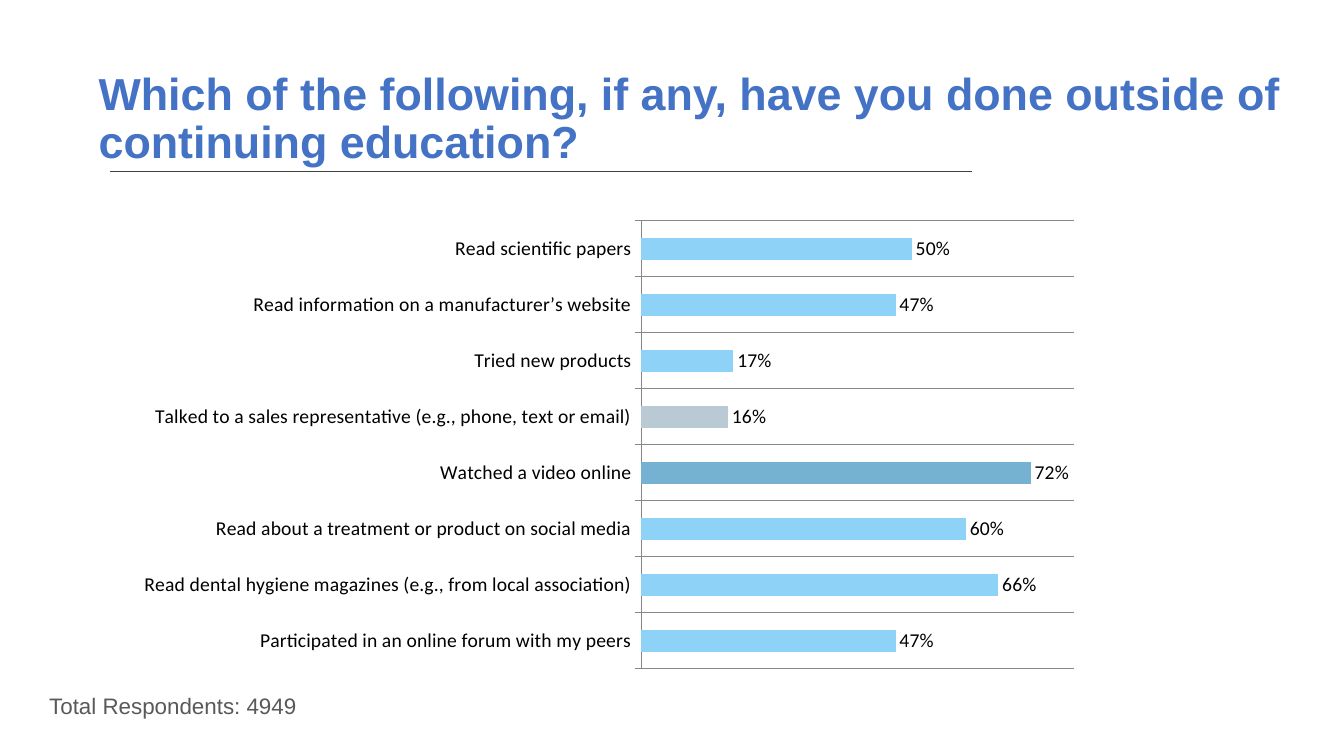
import pptx
import pptx.chart.data
import pptx.dml.color
import pptx.enum.chart
import pptx.enum.shapes
import pptx.enum.text
import pptx.oxml
import pptx.oxml.ns
import pptx.util
from pptx.util import Inches

theme = {
    "title": "4472C4", "note": "595959", "rule": "404040", "axis": "868686",
    "text": "000000", "bar": "8ED3F7", "low": "BACAD4", "high": "75B2D2",
    "head": 32, "foot": 16, "label": 14, "font": "Arial", "plot": "Calibri",
}


def paint(name):
    return pptx.dml.color.RGBColor.from_string(theme[name])


def write(text, box, size, color, anchor, bold=False):
    frame = slide.shapes.add_textbox(*map(Inches, box)).text_frame
    frame.word_wrap = True
    frame.vertical_anchor = anchor
    para = frame.paragraphs[0]
    para.text = text
    para.line_spacing = 0.9
    para.font.name = theme["font"]
    para.font.size = pptx.util.Pt(theme[size])
    para.font.bold = bold
    para.font.color.rgb = paint(color)


deck = pptx.Presentation()
deck.slide_width = Inches(13.33)
deck.slide_height = Inches(7.5)
slide = deck.slides.add_slide(deck.slide_layouts[6])
anchors = pptx.enum.text.MSO_ANCHOR

rule = slide.shapes.add_connector(
    pptx.enum.shapes.MSO_CONNECTOR.STRAIGHT,
    Inches(1.09), Inches(1.7), Inches(9.64), Inches(1.7))
rule.line.color.rgb = paint("rule")
rule.line.width = pptx.util.Pt(0.5)
rule._element.spPr.append(pptx.oxml.parse_xml(
    f"<a:effectLst {pptx.oxml.ns.nsdecls('a')}/>"))

write("Which of the following, if any, have you done outside of continuing education?",
      (0.88, 0.9, 12, 0.58), "head", "title", anchors.MIDDLE, True)
write("Total Respondents: 4949", (0.39, 6.85, 12, 0.42), "foot", "note", anchors.TOP)

shares = {
    "Read scientific papers": 0.50,
    "Read information on a manufacturer’s website": 0.47,
    "Tried new products": 0.17,
    "Talked to a sales representative (e.g., phone, text or email)": 0.16,
    "Watched a video online": 0.72,
    "Read about a treatment or product on social media": 0.60,
    "Read dental hygiene magazines (e.g., from local association)": 0.66,
    "Participated in an online forum with my peers": 0.47,
}
data = pptx.chart.data.CategoryChartData(number_format="0%")
data.categories = list(shares)
data.add_series("Series 1", list(shares.values()))
chart = slide.shapes.add_chart(
    pptx.enum.chart.XL_CHART_TYPE.BAR_CLUSTERED,
    Inches(1), Inches(2.05), Inches(9.75), Inches(4.73), data).chart
chart.has_legend = False
chart.has_title = False
chart.font.name = theme["plot"]
chart.font.size = pptx.util.Pt(theme["label"])
chart.font.color.rgb = paint("text")

rows = chart.category_axis
rows.reverse_order = True
rows.has_major_gridlines = True
rows.major_tick_mark = pptx.enum.chart.XL_TICK_MARK.OUTSIDE
for line in (rows.format.line, rows.major_gridlines.format.line):
    line.color.rgb = paint("axis")
    line.width = pptx.util.Pt(0.75)

scale = chart.value_axis
scale.minimum_scale = 0
scale.maximum_scale = 0.8
scale.has_major_gridlines = False
scale.visible = False

plot = chart.plots[0]
plot.gap_width = 150
plot.vary_by_categories = False
plot.has_data_labels = True
labels = plot.data_labels
labels.show_value = True
labels.number_format = "0%"
labels.number_format_is_linked = False
labels.position = pptx.enum.chart.XL_LABEL_POSITION.OUTSIDE_END

bars = plot.series[0]
bars.format.fill.solid()
bars.format.fill.fore_color.rgb = paint("bar")
values = list(shares.values())
for tone, pick in (("low", min), ("high", max)):
    fill = bars.points[values.index(pick(values))].format.fill
    fill.solid()
    fill.fore_color.rgb = paint(tone)

area = chart._chartSpace.chart.plotArea
for old in area.findall(pptx.oxml.ns.qn("c:layout")):
    area.remove(old)
sides = {"x": 0.55, "y": 0.03, "w": 0.44, "h": 0.94}
modes = "".join(f'<c:{side}Mode val="edge"/>' for side in "xy")
sizes = "".join(f'<c:{side} val="{size}"/>' for side, size in sides.items())
area.insert(0, pptx.oxml.parse_xml(
    f'<c:layout {pptx.oxml.ns.nsdecls("c")}><c:manualLayout>'
    f'<c:layoutTarget val="inner"/>{modes}{sizes}</c:manualLayout></c:layout>'))

deck.save("out.pptx")
